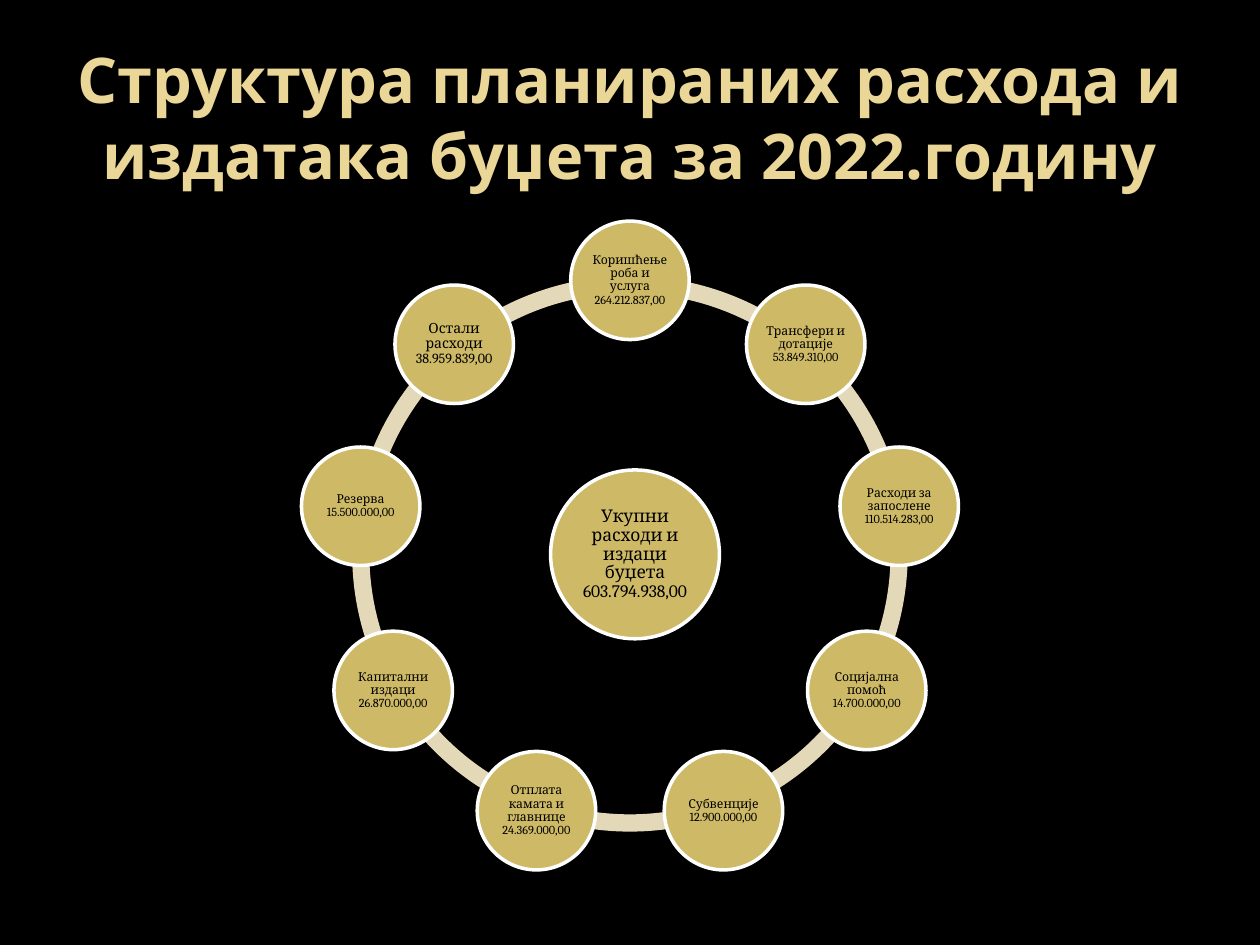
"""Build the slide of planned budget expenditure as a ring of circles around a total."""
from dataclasses import dataclass
from math import cos, radians, sin

from pptx import Presentation
from pptx.dml.color import RGBColor
from pptx.enum.shapes import MSO_SHAPE as Shape
from pptx.enum.text import MSO_ANCHOR as Anchor, PP_ALIGN as Align
from pptx.util import Inches, Pt

CX, CY = 5.0, 4.395
RADIUS = 2.17
RING_SIZE = 4.41
NODE_SIZE, HUB_SIZE = 0.94, 1.34
FULL_TURN = 216


@dataclass
class Item:
    name: str
    amount: str
    size: int = 7


TOTAL = Item("Укупни расходи и издаци буџета", "603.794.938,00", 10)
ITEMS = [
    Item("Коришћење роба и услуга", "264.212.837,00"),
    Item("Трансфери и дотације", "53.849.310,00"),
    Item("Расходи за запослене", "110.514.283,00"),
    Item("Социјална помоћ", "14.700.000,00"),
    Item("Субвенције", "12.900.000,00"),
    Item("Отплата камата и главнице", "24.369.000,00"),
    Item("Капитални издаци", "26.870.000,00"),
    Item("Резерва", "15.500.000,00"),
    Item("Остали расходи", "38.959.839,00", 8),
]


def set_color(target, color: str) -> None:
    target.rgb = RGBColor.from_string(color)


def format_text(p, font: str, size: int, color: str, bold: bool = False) -> None:
    p.alignment = Align.CENTER
    for r in p.runs:
        r.font.name, r.font.size, r.font.bold = font, Pt(size), bold
        set_color(r.font.color, color)


def add_centered(s, kind, x: float, y: float, size: float, color: str):
    sp = s.shapes.add_shape(kind, Inches(x - size / 2), Inches(y - size / 2),
                            Inches(size), Inches(size))
    sp.shadow.inherit = False
    sp.fill.solid()
    set_color(sp.fill.fore_color, color)
    return sp


def add_arc(s, start: float, sweep: float) -> None:
    sp = add_centered(s, Shape.BLOCK_ARC, CX, CY, RING_SIZE, "E3D9B8")
    sp.line.fill.background()
    for i, value in enumerate((start % FULL_TURN, (start + sweep) % FULL_TURN, 0.031)):
        sp.adjustments[i] = value


def add_circle(s, item: Item, x: float, y: float, size: float) -> None:
    sp = add_centered(s, Shape.OVAL, x, y, size, "CEB966")
    sp.line.width = Pt(2)
    set_color(sp.line.color, "FFFFFF")
    tf = sp.text_frame
    tf.word_wrap = True
    tf.vertical_anchor = Anchor.MIDDLE
    tf.margin_left = tf.margin_right = tf.margin_top = tf.margin_bottom = Inches(0.01)
    tf.text = f"{item.name} {item.amount}"
    p = tf.paragraphs[0]
    p.line_spacing = 0.9
    format_text(p, "Cambria", item.size, "000000")


def add_title(s, text: str) -> None:
    title = s.shapes.title
    title.left, title.top = Inches(0.5), Inches(0.3)
    title.width, title.height = Inches(9), Inches(1.25)
    tf = title.text_frame
    tf.text = text
    tf.word_wrap = True
    tf.vertical_anchor = Anchor.MIDDLE
    format_text(tf.paragraphs[0], "Open Sans", 36, "EAD696", True)


def main() -> None:
    prs = Presentation()
    prs.slide_width, prs.slide_height = Inches(10), Inches(7.5)
    s = prs.slides.add_slide(prs.slide_layouts[5])
    s.background.fill.solid()
    set_color(s.background.fill.fore_color, "000000")
    add_title(s, "Структура планираних расхода и издатака буџета за 2022.годину")

    sweep = FULL_TURN / len(ITEMS)
    for i in range(len(ITEMS)):
        add_arc(s, 138 - i * sweep, sweep)
    add_circle(s, TOTAL, 5.04, 4.4, HUB_SIZE)
    for i, item in enumerate(ITEMS):
        angle = radians(i * 360 / len(ITEMS))
        add_circle(s, item, CX + RADIUS * sin(angle), CY - RADIUS * cos(angle), NODE_SIZE)
    prs.save("out.pptx")


if __name__ == "__main__":
    main()
